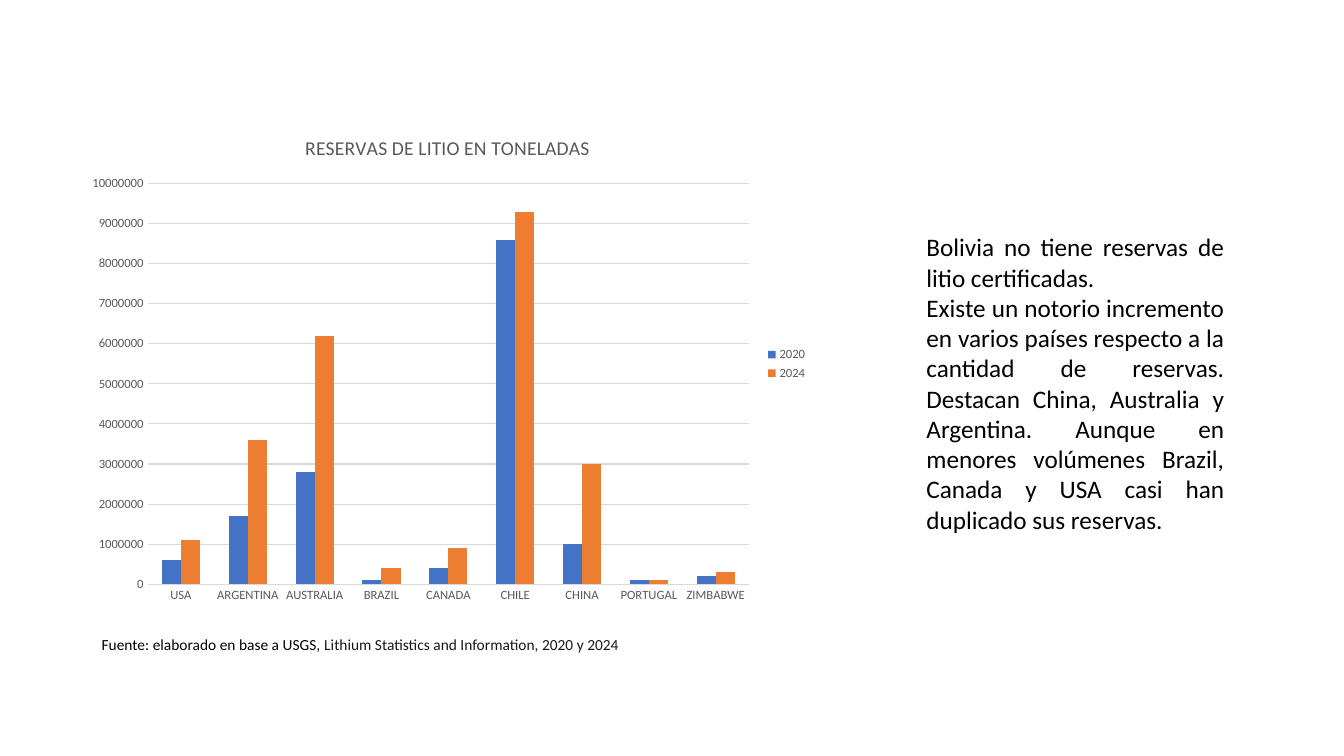
import pptx
import pptx.chart.data
import pptx.dml.color
import pptx.enum.chart
import pptx.enum.text
import pptx.util

Inches = pptx.util.Inches
COLORS = {"text": "000000", "source": "171717", "label": "595959",
          "grid": "D9D9D9", "2020": "4472C4", "2024": "ED7D31"}
COUNTRIES = ["USA", "ARGENTINA", "AUSTRALIA", "BRAZIL", "CANADA",
             "CHILE", "CHINA", "PORTUGAL", "ZIMBABWE"]
RESERVES = {
    "2020": [600000, 1700000, 2800000, 100000, 400000, 8600000, 1000000, 100000, 200000],
    "2024": [1100000, 3600000, 6200000, 400000, 900000, 9300000, 3000000, 100000, 300000],
}


class ReservesSlide:
    """Holds the style and the current slide, and adds its elements."""

    def __init__(self, slide, font_name="Calibri"):
        self.slide = slide
        self.font_name = font_name

    def color(self, name):
        return pptx.dml.color.RGBColor.from_string(COLORS[name])

    def style(self, font, size, color):
        font.name = self.font_name
        font.size = pptx.util.Pt(size)
        font.bold = False
        font.color.rgb = self.color(color)

    def rule(self, line):
        line.color.rgb = self.color("grid")
        line.width = pptx.util.Pt(0.75)

    def text(self, box, paragraphs, size, align):
        frame = self.slide.shapes.add_textbox(*map(Inches, box)).text_frame
        frame.word_wrap = True
        frame.auto_size = pptx.enum.text.MSO_AUTO_SIZE.SHAPE_TO_FIT_TEXT
        for index, pieces in enumerate(paragraphs):
            paragraph = frame.add_paragraph() if index else frame.paragraphs[0]
            paragraph.alignment = align
            for words, color in pieces:
                run = paragraph.add_run()
                run.text = words
                self.style(run.font, size, color)

    def column_chart(self, box, title, categories, series):
        data = pptx.chart.data.CategoryChartData()
        data.categories = categories
        for name, values in series.items():
            data.add_series(name, values)
        chart = self.slide.shapes.add_chart(
            pptx.enum.chart.XL_CHART_TYPE.COLUMN_CLUSTERED,
            *map(Inches, box), data).chart
        self.style(chart.font, 10, "text")

        chart.has_title = True
        heading = chart.chart_title.text_frame
        heading.text = title
        self.style(heading.paragraphs[0].runs[0].font, 14, "label")
        chart.chart_title.include_in_layout = False

        chart.has_legend = True
        chart.legend.position = pptx.enum.chart.XL_LEGEND_POSITION.RIGHT
        chart.legend.include_in_layout = False
        self.style(chart.legend.font, 9, "label")

        for axis in (chart.category_axis, chart.value_axis):
            axis.major_tick_mark = pptx.enum.chart.XL_TICK_MARK.NONE
            axis.minor_tick_mark = pptx.enum.chart.XL_TICK_MARK.NONE
            self.style(axis.tick_labels.font, 9, "label")
        self.rule(chart.category_axis.format.line)
        chart.value_axis.format.line.fill.background()
        chart.value_axis.has_major_gridlines = True
        self.rule(chart.value_axis.major_gridlines.format.line)
        chart.value_axis.minimum_scale = 0
        chart.value_axis.maximum_scale = 10000000
        chart.value_axis.major_unit = 1000000

        plot = chart.plots[0]
        plot.gap_width = 150
        plot.overlap = 0
        plot.vary_by_categories = False
        for columns in plot.series:
            columns.format.fill.solid()
            columns.format.fill.fore_color.rgb = self.color(columns.name)


def main():
    presentation = pptx.Presentation()
    presentation.slide_width = Inches(13.33)
    presentation.slide_height = Inches(7.5)
    page = ReservesSlide(presentation.slides.add_slide(presentation.slide_layouts[6]))
    align = pptx.enum.text.PP_ALIGN

    page.column_chart((0.77, 1.14, 7.34, 4.94), "RESERVAS DE LITIO EN TONELADAS",
                      COUNTRIES, RESERVES)
    page.text((0.91, 6.25, 5.86, 0.59), [
        [("Fuente: elaborado en base a USGS, ", "text"),
         ("Lithium Statistics and Information, 2020 y 2024", "source")],
    ], 11, align.LEFT)
    page.text((9.09, 2.25, 3.15, 3.13), [
        [("Bolivia no tiene reservas de litio certificadas.", "text")],
        [("Existe un notorio incremento en varios países respecto a la cantidad de "
          "reservas. Destacan China, Australia y Argentina. Aunque en menores "
          "volúmenes Brazil, Canada y USA casi han duplicado sus reservas.", "text")],
    ], 18, align.JUSTIFY)

    presentation.save("out.pptx")


if __name__ == "__main__":
    main()
